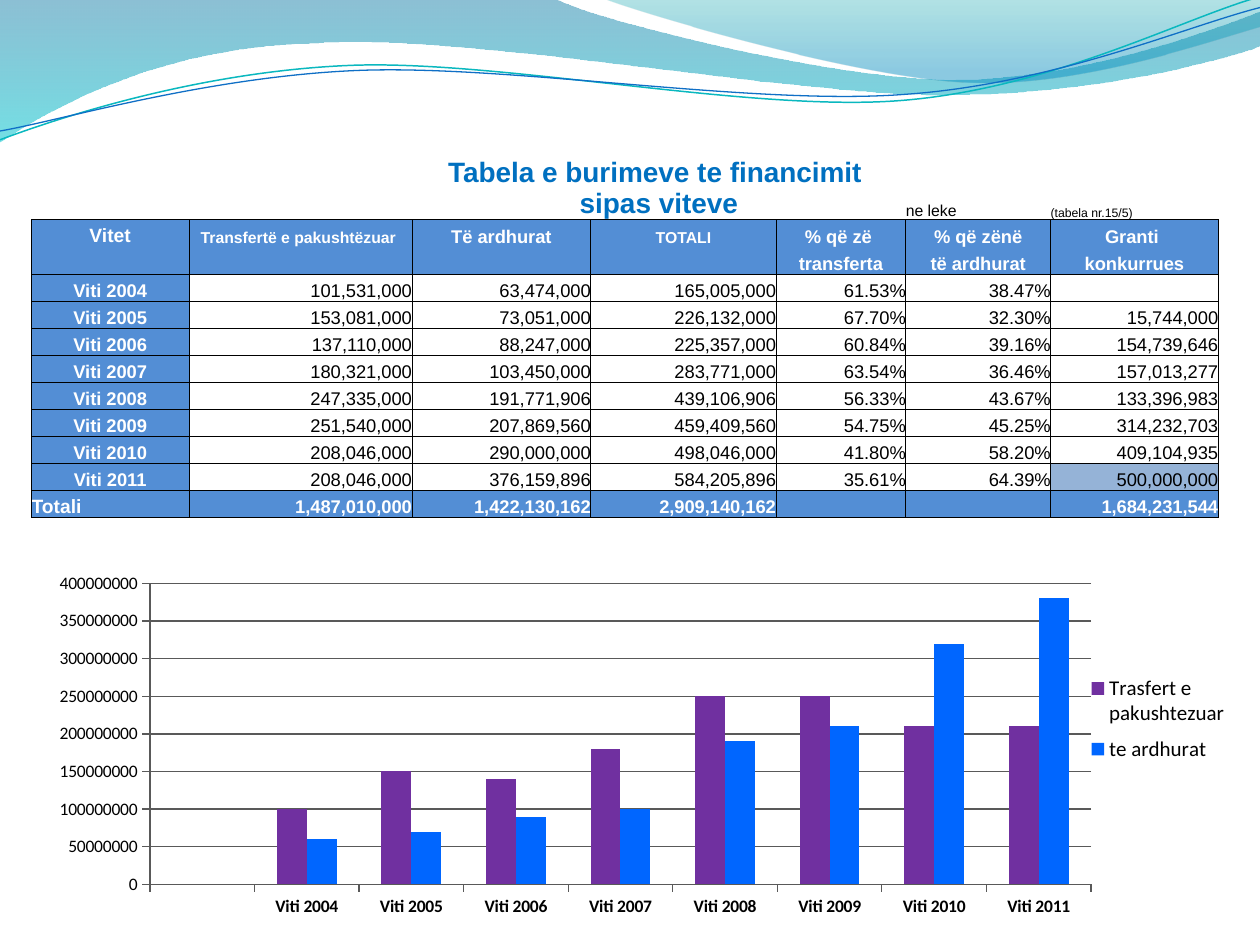
import lxml.etree
import pptx
import pptx.chart.data
import pptx.dml.color
import pptx.enum.chart
import pptx.enum.text
import pptx.oxml
import pptx.oxml.ns
import pptx.util

Inches = pptx.util.Inches
Pt = pptx.util.Pt
RGBColor = pptx.dml.color.RGBColor
Align = pptx.enum.text.PP_ALIGN
qn = pptx.oxml.ns.qn

BLACK = RGBColor(0, 0, 0)
WHITE = RGBColor(255, 255, 255)
TITLE_BLUE = RGBColor(0x00, 0x70, 0xC0)
HEADER_BLUE = RGBColor(0x53, 0x8E, 0xD5)
GRANT_BLUE = RGBColor(0x95, 0xB3, 0xD7)
TRANSFER_PURPLE = RGBColor(0x70, 0x30, 0xA0)
INCOME_BLUE = RGBColor(0x00, 0x66, 0xFF)
GRID_GREY = RGBColor(0x59, 0x59, 0x59)
DEEP_BLUE = RGBColor(0x00, 0x74, 0xA1)
TURQUOISE = RGBColor(0x00, 0xC6, 0xCF)
TEAL = RGBColor(0x00, 0xA1, 0xA9)
SKY_BLUE = RGBColor(0x00, 0x8B, 0xBF)
TEAL_STROKE = RGBColor(0x0A, 0xB8, 0xBF)
BLUE_STROKE = RGBColor(0x0F, 0x6F, 0xC6)

WIDE_WAVE = [(0, 0), (4.4, -0.01), (4.76, 0.17, 6.64, 0.63, 7.58, 0.63),
             (8.53, 0.63, 9.58, 0.26, 10, 0.09), (10.01, 0.36),
             (9.83, 0.44, 8.7, 0.76, 7.46, 0.75), (6.22, 0.75, 3.82, 0.28, 2.57, 0.34),
             (1.29, 0.36, 0.46, 0.83, -0.01, 1.13)]
RIGHT_WAVE = [(4.79, -0.01), (5.09, 0.11, 6.82, 0.62, 7.69, 0.65),
              (8.56, 0.69, 9.61, 0.32, 10, 0.21), (10, 0)]
TEAL_CURVE = [(0, 1.11), (0.48, 0.93, 1.58, 0.57, 2.77, 0.52),
              (3.95, 0.47, 5.93, 0.89, 7.13, 0.8), (8.33, 0.71, 9.38, 0.15, 9.98, -0.02)]
BLUE_CURVE = [(0, 1.04), (0.47, 0.96, 1.64, 0.61, 2.83, 0.56),
              (4.03, 0.51, 5.97, 0.84, 7.17, 0.75), (8.36, 0.67, 9.41, 0.21, 10, 0.06)]

COLUMN_WIDTHS = [1.25, 1.77, 1.42, 1.47, 1.03, 1.15, 1.33]
TITLE_HEIGHT = 0.49
ROW_HEIGHT = 2.58 / 12
HEADINGS = [("Vitet", 11), ("Transfertë e pakushtëzuar ", 9), ("Të ardhurat", 10.5),
            ("TOTALI", 9), ("% që zë ", 10.5), ("% që zënë", 10.5), ("Granti ", 10.5)]
SUBHEADINGS = ["", "", "", "", "transferta", "të ardhurat", "konkurrues"]
YEARS = [f"Viti {year}" for year in range(2004, 2012)]
FUNDING = [
    ["101,531,000", "63,474,000", "165,005,000", "61.53%", "38.47%", ""],
    ["153,081,000", "73,051,000", "226,132,000", "67.70%", "32.30%", "15,744,000"],
    ["137,110,000", "88,247,000", "225,357,000", "60.84%", "39.16%", "154,739,646"],
    ["180,321,000", "103,450,000", "283,771,000", "63.54%", "36.46%", "157,013,277"],
    ["247,335,000", "191,771,906", "439,106,906", "56.33%", "43.67%", "133,396,983"],
    ["251,540,000", "207,869,560", "459,409,560", "54.75%", "45.25%", "314,232,703"],
    ["208,046,000", "290,000,000", "498,046,000", "41.80%", "58.20%", "409,104,935"],
    ["208,046,000", "376,159,896", "584,205,896", "35.61%", "64.39%", "500,000,000"],
]
TOTALS = ["1,487,010,000", "1,422,130,162", "2,909,140,162", "", "", "1,684,231,544"]
CHART_WIDTH, CHART_HEIGHT = 10, 3
MILLION = 1_000_000
CHART_SERIES = [
    ("Trasfert e pakushtezuar ", [100, 150, 140, 180, 250, 250, 210, 210], TRANSFER_PURPLE),
    ("te ardhurat", [60, 70, 90, 100, 190, 210, 320, 380], INCOME_BLUE),
]


def add_outline(slide, outline, close):
    points = [(Inches(x), Inches(y)) for segment in outline
              for x, y in zip(segment[::2], segment[1::2])]
    builder = slide.shapes.build_freeform(*points[0])
    builder.add_line_segments(points[1:], close=close)
    shape = builder.convert_to_shape()
    shape.shadow.inherit = False
    shape.fill.background()
    vertices = iter(list(shape._element.iter(qn("a:lnTo"))))
    for segment in outline[1:]:
        first = next(vertices)
        if len(segment) == 6:
            bend = lxml.etree.Element(qn("a:cubicBezTo"))
            first.addprevious(bend)
            for vertex in (first, next(vertices), next(vertices)):
                bend.append(vertex[0])
                vertex.getparent().remove(vertex)
    return shape


def add_wave(slide, outline, stops):
    wave = add_outline(slide, outline, True)
    wave.line.fill.background()
    stop_xml = "".join(
        f'<a:gs pos="{position * 1000}"><a:srgbClr val="{color}">'
        f'<a:alpha val="{alpha * 1000}"/></a:srgbClr></a:gs>'
        for position, color, alpha in stops)
    gradient = pptx.oxml.parse_xml(
        f'<a:gradFill {pptx.oxml.ns.nsdecls("a")} rotWithShape="1"><a:gsLst>{stop_xml}'
        '</a:gsLst><a:lin ang="5400000" scaled="0"/></a:gradFill>')
    properties = wave._element.spPr
    properties.replace(properties.find(qn("a:noFill")), gradient)


def add_curve(slide, outline, color, width):
    curve = add_outline(slide, outline, False)
    curve.line.color.rgb = color
    curve.line.width = Pt(width)


def set_borders(cell, sides):
    properties = cell._tc.get_or_add_tcPr()
    for index, side in enumerate("LRTB"):
        border = lxml.etree.Element(qn(f"a:ln{side}"), w=str(Pt(0.5)))
        if side in sides:
            fill = lxml.etree.SubElement(border, qn("a:solidFill"))
            lxml.etree.SubElement(fill, qn("a:srgbClr"), val=str(BLACK))
        else:
            lxml.etree.SubElement(border, qn("a:noFill"))
        properties.insert(index, border)


def write_cell(cell, text, size=10.5, color=BLACK, bold=False, align=Align.RIGHT,
               fill=None, borders="LRTB"):
    cell.margin_left = cell.margin_right = cell.margin_top = cell.margin_bottom = 0
    cell.vertical_anchor = pptx.enum.text.MSO_ANCHOR.BOTTOM
    paragraph = cell.text_frame.paragraphs[0]
    paragraph.alignment = align
    for index, line in enumerate(text.split("\n") if text else []):
        if index:
            paragraph.add_line_break()
        run = paragraph.add_run()
        run.text = line
        run.font.name, run.font.size, run.font.bold = "Arial", Pt(size), bold
        run.font.color.rgb = color
    if not text:
        lxml.etree.SubElement(paragraph._p, qn("a:endParaRPr"), sz=str(int(size * 100)))
    if fill is None:
        cell.fill.background()
    else:
        cell.fill.solid()
        cell.fill.fore_color.rgb = fill
    set_borders(cell, borders)


def add_funding_table(slide):
    row_count = len(YEARS) + 4
    table = slide.shapes.add_table(
        row_count, len(COLUMN_WIDTHS), Inches(0.25), Inches(1.25),
        Inches(sum(COLUMN_WIDTHS)), Inches(TITLE_HEIGHT + ROW_HEIGHT * (row_count - 1))).table
    table.first_row = table.horz_banding = False
    for column, width in zip(table.columns, COLUMN_WIDTHS):
        column.width = Inches(width)
    for index, row in enumerate(table.rows):
        row.height = Inches(ROW_HEIGHT if index else TITLE_HEIGHT)

    title = "Tabela e burimeve te financimit \nsipas viteve"
    captions = {2: (title, 16, TITLE_BLUE, True, Align.CENTER),
                5: ("ne leke", 9, BLACK, False, Align.LEFT),
                6: ("(tabela nr.15/5)", 7, BLACK, False, Align.LEFT)}
    for column in range(len(COLUMN_WIDTHS)):
        write_cell(table.cell(0, column), *captions.get(column, ("",)), borders="B")
    table.cell(0, 0).merge(table.cell(0, 1))
    table.cell(0, 2).merge(table.cell(0, 4))

    label = dict(color=WHITE, bold=True, fill=HEADER_BLUE)
    for column, ((heading, size), subheading) in enumerate(zip(HEADINGS, SUBHEADINGS)):
        write_cell(table.cell(1, column), heading, size=size, align=Align.CENTER, borders="LRT", **label)
        write_cell(table.cell(2, column), subheading, align=Align.CENTER, borders="LRB", **label)
    for row, (year, amounts) in enumerate(zip(YEARS, FUNDING), start=3):
        write_cell(table.cell(row, 0), year, align=Align.CENTER, **label)
        for column, amount in enumerate(amounts, start=1):
            planned = year == YEARS[-1] and column == len(amounts)
            write_cell(table.cell(row, column), amount, fill=GRANT_BLUE if planned else None)
    write_cell(table.cell(row_count - 1, 0), "Totali", size=11, align=Align.LEFT, **label)
    for column, total in enumerate(TOTALS, start=1):
        write_cell(table.cell(row_count - 1, column), total, **label)


def style_font(font, size, bold=False):
    font.name, font.size, font.bold = "Calibri", Pt(size), bold
    font.color.rgb = BLACK


def place(parent, left, top, width, height, inner=False):
    layout = parent.find(qn("c:layout"))
    if layout is None:
        layout = lxml.etree.Element(qn("c:layout"))
        parent.insert(0 if inner else 1, layout)
    manual = lxml.etree.SubElement(layout, qn("c:manualLayout"))
    settings = [("layoutTarget", "inner")] if inner else []
    settings += [("xMode", "edge"), ("yMode", "edge"),
                 ("x", left / CHART_WIDTH), ("y", top / CHART_HEIGHT),
                 ("w", width / CHART_WIDTH), ("h", height / CHART_HEIGHT)]
    for name, value in settings:
        lxml.etree.SubElement(manual, qn(f"c:{name}"), val=str(value))


def add_funding_chart(slide):
    data = pptx.chart.data.CategoryChartData(number_format="0")
    data.categories = [""] + YEARS
    for name, millions, _ in CHART_SERIES:
        data.add_series(name, [None] + [value * MILLION for value in millions])
    chart = slide.shapes.add_chart(
        pptx.enum.chart.XL_CHART_TYPE.COLUMN_CLUSTERED, Inches(0), Inches(4.5),
        Inches(CHART_WIDTH), Inches(CHART_HEIGHT), data).chart
    chart.has_title = False
    style_font(chart.font, 10)
    plot = chart.plots[0]
    plot.gap_width, plot.overlap, plot.vary_by_categories = 150, 0, False
    for series, (_, _, color) in zip(plot.series, CHART_SERIES):
        series.format.fill.solid()
        series.format.fill.fore_color.rgb = color
    amounts = chart.value_axis
    amounts.minimum_scale, amounts.maximum_scale, amounts.major_unit = 0, 400 * MILLION, 50 * MILLION
    amounts.has_major_gridlines = True
    amounts.tick_labels.number_format = "0"
    amounts.tick_labels.number_format_is_linked = False
    for axis, bold in ((amounts, False), (chart.category_axis, True)):
        axis.major_tick_mark = pptx.enum.chart.XL_TICK_MARK.OUTSIDE
        style_font(axis.tick_labels.font, 10, bold)
    for line in (amounts.format.line, chart.category_axis.format.line, amounts.major_gridlines.format.line):
        line.color.rgb = GRID_GREY
        line.width = Pt(0.75)
    chart.has_legend = True
    chart.legend.position = pptx.enum.chart.XL_LEGEND_POSITION.RIGHT
    chart.legend.include_in_layout = False
    style_font(chart.legend.font, 12)
    place(chart._chartSpace.chart.plotArea, 1.19, 0.13, 7.47, 2.39, inner=True)
    place(chart.legend._element, 8.56, 0.78, 1.3, 0.85)


def main():
    deck = pptx.Presentation()
    deck.slide_width, deck.slide_height = Inches(10), Inches(7.5)
    slide = deck.slides.add_slide(deck.slide_layouts[6])
    add_wave(slide, WIDE_WAVE, [(0, DEEP_BLUE, 45), (100, TURQUOISE, 55)])
    add_wave(slide, RIGHT_WAVE, [(0, TEAL, 30), (80, SKY_BLUE, 45)])
    add_curve(slide, TEAL_CURVE, TEAL_STROKE, 0.85)
    add_curve(slide, BLUE_CURVE, BLUE_STROKE, 0.75)
    add_funding_table(slide)
    add_funding_chart(slide)
    deck.save("out.pptx")


if __name__ == "__main__":
    main()
